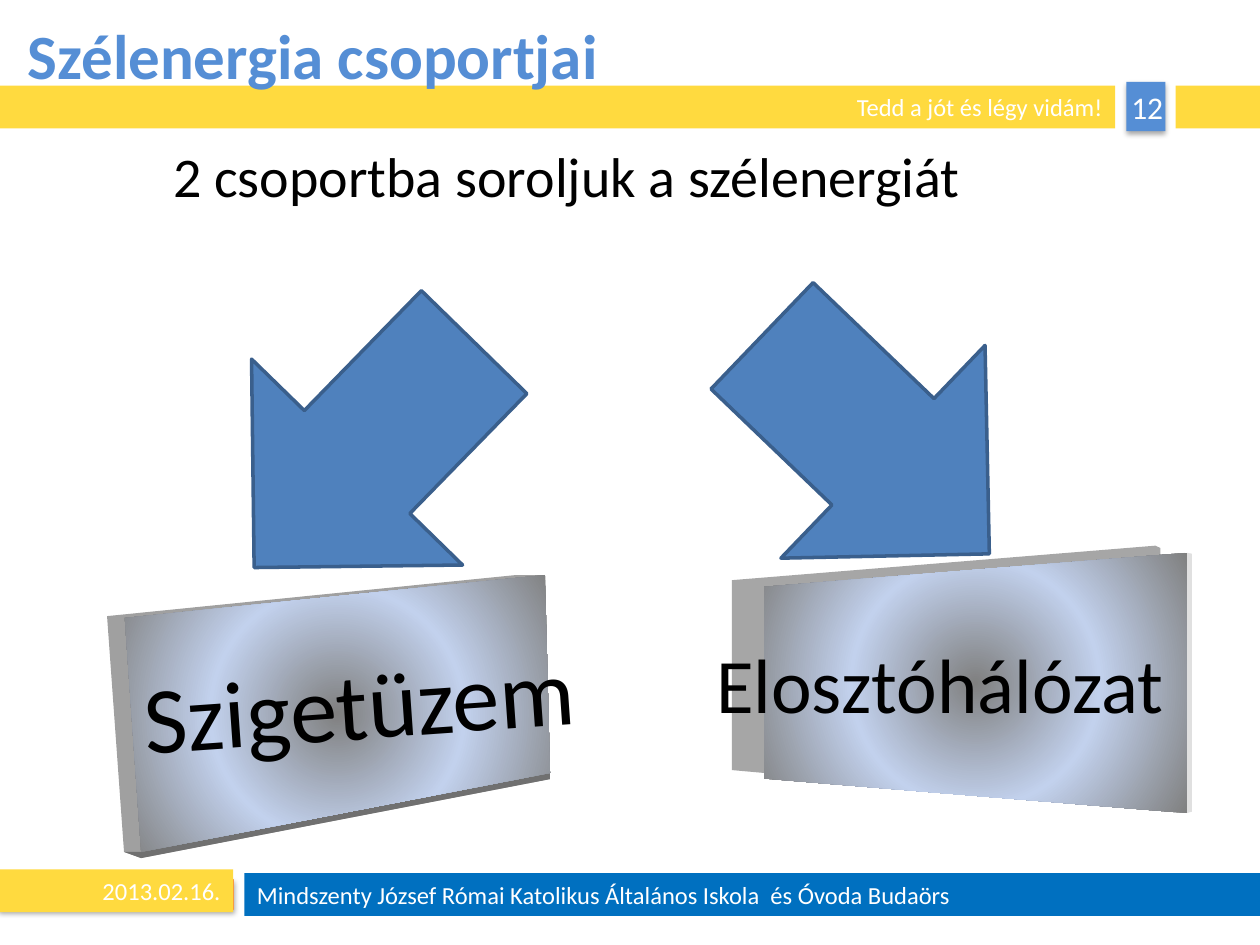
"""Build the slide on the two groups of wind energy."""
from dataclasses import dataclass
from typing import Optional

from lxml.etree import SubElement
from pptx import Presentation
from pptx.dml.color import RGBColor
from pptx.enum.shapes import MSO_SHAPE
from pptx.enum.text import MSO_ANCHOR, PP_ALIGN
from pptx.oxml.ns import qn
from pptx.util import Emu, Inches, Pt

FONT = "Calibri"
WHITE = RGBColor(0xFF, 0xFF, 0xFF)
BLACK = RGBColor(0x00, 0x00, 0x00)
YELLOW = RGBColor(0xFF, 0xDA, 0x3F)
ORANGE = RGBColor(0xFF, 0x90, 0x34)
ORANGE_LINE = RGBColor(0xF6, 0x92, 0x40)
FOOTER_BLUE = RGBColor(0x00, 0x70, 0xC0)
TITLE_BLUE = RGBColor(0x55, 0x8E, 0xD5)
ARROW_BLUE = RGBColor(0x4F, 0x81, 0xBD)
ARROW_LINE = RGBColor(0x3A, 0x5F, 0x8C)
SIDE_GREY = RGBColor(0xA0, 0xA0, 0xA0)
BACK_GREY = RGBColor(0xA6, 0xA6, 0xA6)
BASE_GREY = RGBColor(0x70, 0x70, 0x70)
EDGE_GREY = RGBColor(0xE0, 0xE0, 0xE0)
PANEL_GREY = RGBColor(0x80, 0x80, 0x80)
PANEL_BLUE = RGBColor(0xC2, 0xD1, 0xED)
PANEL_STOPS = ((0, PANEL_GREY), (50, PANEL_BLUE), (100, PANEL_GREY))

SLIDE_WIDTH = Inches(10)
SLIDE_HEIGHT = Inches(7.5)
Points = tuple[tuple[float, float], ...]


@dataclass(frozen=True)
class Frame:
    """A place on the slide in percent of its width and height."""
    left: float
    top: float
    width: float
    height: float

    def lengths(self) -> tuple[Emu, Emu, Emu, Emu]:
        return across(self.left), down(self.top), across(self.width), down(self.height)


@dataclass(frozen=True)
class Label:
    """One line of text and its look."""
    text: str
    size: int
    color: RGBColor = WHITE
    align: PP_ALIGN = PP_ALIGN.LEFT
    bold: bool = False


@dataclass(frozen=True)
class Bar:
    """A coloured strip of the slide frame."""
    frame: Frame
    fill: RGBColor
    label: Optional[Label] = None
    line: Optional[RGBColor] = None
    shadow: bool = False


@dataclass(frozen=True)
class Arrow:
    """A block arrow turned towards its panel."""
    frame: Frame
    rotation: float


@dataclass(frozen=True)
class Panel:
    """A slab seen in perspective, with its caption."""
    sides: tuple[tuple[RGBColor, Points], ...]
    front: Points
    frame: Frame
    label: Label
    rotation: float = 0


BARS = (
    Bar(Frame(0, 93.07, 18.5, 3.2), ORANGE, line=ORANGE_LINE, shadow=True),
    Bar(Frame(19.4, 92.4, 80.6, 4.53), FOOTER_BLUE,
        Label("Mindszenty József Római Katolikus Általános Iskola  és Óvoda Budaörs", 14)),
    Bar(Frame(89.4, 8.67, 3.1, 5.2), TITLE_BLUE, shadow=True),
    Bar(Frame(0, 92, 18.5, 4.53), YELLOW, Label("2013.02.16.", 14, align=PP_ALIGN.RIGHT)),
    Bar(Frame(0, 9.07, 88.5, 4.53), YELLOW,
        Label("Tedd a jót és légy vidám!", 14, align=PP_ALIGN.RIGHT)),
    Bar(Frame(93.3, 9.07, 6.7, 4.53), YELLOW),
)
ARROWS = (
    Arrow(Frame(16.4, 32.53, 25, 31.2), 314.3),
    Arrow(Frame(57, 31.47, 25, 31.2), 223.8),
)
PANELS = (
    Panel(
        ((SIDE_GREY, ((8.5, 65.2), (40.95, 60.85), (43.25, 60.85),
                      (43.65, 82.45), (11.2, 90.8), (9.85, 90.15))),
         (BASE_GREY, ((9.85, 90.15), (11.2, 90.15), (43.65, 81.8),
                      (43.65, 82.45), (11.2, 90.8)))),
        ((9.9, 65.4), (43.25, 60.85), (43.65, 81.8), (11.2, 90.15)),
        Frame(8.6, 62.8, 39.8, 22.93),
        Label("Szigetüzem", 54, BLACK, PP_ALIGN.CENTER), -4),
    Panel(
        ((BACK_GREY, ((58.1, 61.4), (91.7, 57.75), (92.1, 58), (92.1, 59.5),
                      (60.65, 62.1), (60.65, 81.8), (58.1, 81.5))),
         (EDGE_GREY, ((94.2, 58.5), (94.6, 58.6), (94.6, 85.9), (94.2, 86.05)))),
        ((60.65, 62.1), (94.2, 58.5), (94.2, 86.05), (60.65, 82.4)),
        Frame(54.7, 60.8, 39.8, 22.93),
        Label("Elosztóhálózat", 44, BLACK, PP_ALIGN.CENTER)),
)


def across(percent: float) -> Emu:
    return Emu(round(SLIDE_WIDTH * percent / 100))


def down(percent: float) -> Emu:
    return Emu(round(SLIDE_HEIGHT * percent / 100))


def write(shape, label: Label, anchor=MSO_ANCHOR.MIDDLE):
    frame = shape.text_frame
    frame.word_wrap = True
    frame.vertical_anchor = anchor
    paragraph = frame.paragraphs[0]
    paragraph.alignment = label.align
    run = paragraph.add_run()
    run.text = label.text
    run.font.name = FONT
    run.font.size = Pt(label.size)
    run.font.bold = label.bold
    run.font.color.rgb = label.color
    return paragraph


def paint(shape, fill: RGBColor, line: Optional[RGBColor] = None, width: float = 0.75) -> None:
    shape.shadow.inherit = False
    shape.fill.solid()
    shape.fill.fore_color.rgb = fill
    if line is None:
        shape.line.fill.background()
    else:
        shape.line.color.rgb = line
        shape.line.width = Pt(width)


def add_shadow(shape) -> None:
    effects = shape._element.spPr.find(qn("a:effectLst"))
    shadow = SubElement(effects, qn("a:outerShdw"), blurRad=str(Pt(3.1)), dist=str(Pt(1.8)),
                        dir="5400000", rotWithShape="0")
    color = SubElement(shadow, qn("a:srgbClr"), val="000000")
    SubElement(color, qn("a:alpha"), val="35000")


def fill_radial(shape) -> None:
    properties = shape._element.spPr
    solid = properties.find(qn("a:solidFill"))
    gradient = SubElement(properties, qn("a:gradFill"), rotWithShape="1")
    stops = SubElement(gradient, qn("a:gsLst"))
    for position, color in PANEL_STOPS:
        stop = SubElement(stops, qn("a:gs"), pos=str(position * 1000))
        SubElement(stop, qn("a:srgbClr"), val=str(color))
    circle = SubElement(gradient, qn("a:path"), path="circle")
    SubElement(circle, qn("a:fillToRect"), l="50000", t="50000", r="50000", b="50000")
    properties.replace(solid, gradient)


def add_bar(slide, bar: Bar) -> None:
    shape = slide.shapes.add_shape(MSO_SHAPE.RECTANGLE, *bar.frame.lengths())
    paint(shape, bar.fill, bar.line)
    if bar.shadow:
        add_shadow(shape)
    if bar.label:
        write(shape, bar.label)


def add_arrow(slide, arrow: Arrow) -> None:
    shape = slide.shapes.add_shape(MSO_SHAPE.LEFT_ARROW, *arrow.frame.lengths())
    paint(shape, ARROW_BLUE, ARROW_LINE, 2)
    shape.rotation = arrow.rotation


def add_text(slide, frame: Frame, label: Label, rotation: float = 0) -> None:
    box = slide.shapes.add_textbox(*frame.lengths())
    box.rotation = rotation
    write(box, label)


def add_polygon(slide, points: Points, fill: RGBColor):
    start, *others = [(across(x), down(y)) for x, y in points]
    builder = slide.shapes.build_freeform(*start)
    builder.add_line_segments(others, close=True)
    shape = builder.convert_to_shape()
    paint(shape, fill)
    return shape


def add_panel(slide, panel: Panel) -> None:
    for color, points in panel.sides:
        add_polygon(slide, points, color)
    fill_radial(add_polygon(slide, panel.front, PANEL_BLUE))
    add_text(slide, panel.frame, panel.label, panel.rotation)


def fill_placeholder(slide, shape, frame: Frame, label: Label):
    shape.left, shape.top, shape.width, shape.height = frame.lengths()
    slide.shapes._spTree.append(shape._element)
    return write(shape, label, MSO_ANCHOR.TOP)


def main() -> None:
    presentation = Presentation()
    presentation.slide_width, presentation.slide_height = SLIDE_WIDTH, SLIDE_HEIGHT
    slide = presentation.slides.add_slide(presentation.slide_layouts[1])
    title, body = slide.placeholders
    for bar in BARS:
        add_bar(slide, bar)
    add_text(slide, Frame(88, 8.67, 6.1, 5.33), Label("12", 18, align=PP_ALIGN.CENTER))
    fill_placeholder(slide, title, Frame(1.2, 1.07, 97.6, 6.93),
                     Label("Szélenergia csoportjai", 36, TITLE_BLUE, bold=True))
    paragraph = fill_placeholder(slide, body, Frame(0, 14.27, 90, 66),
                                 Label("2 csoportba soroljuk a szélenergiát", 32, BLACK,
                                       PP_ALIGN.CENTER))
    paragraph.space_before = Pt(0)
    properties = paragraph._p.get_or_add_pPr()
    properties.set("marL", str(Inches(0.38)))
    properties.set("indent", str(-Inches(0.38)))
    SubElement(properties, qn("a:buNone"))
    for arrow in ARROWS:
        add_arrow(slide, arrow)
    for panel in PANELS:
        add_panel(slide, panel)
    presentation.save("out.pptx")


if __name__ == "__main__":
    main()
